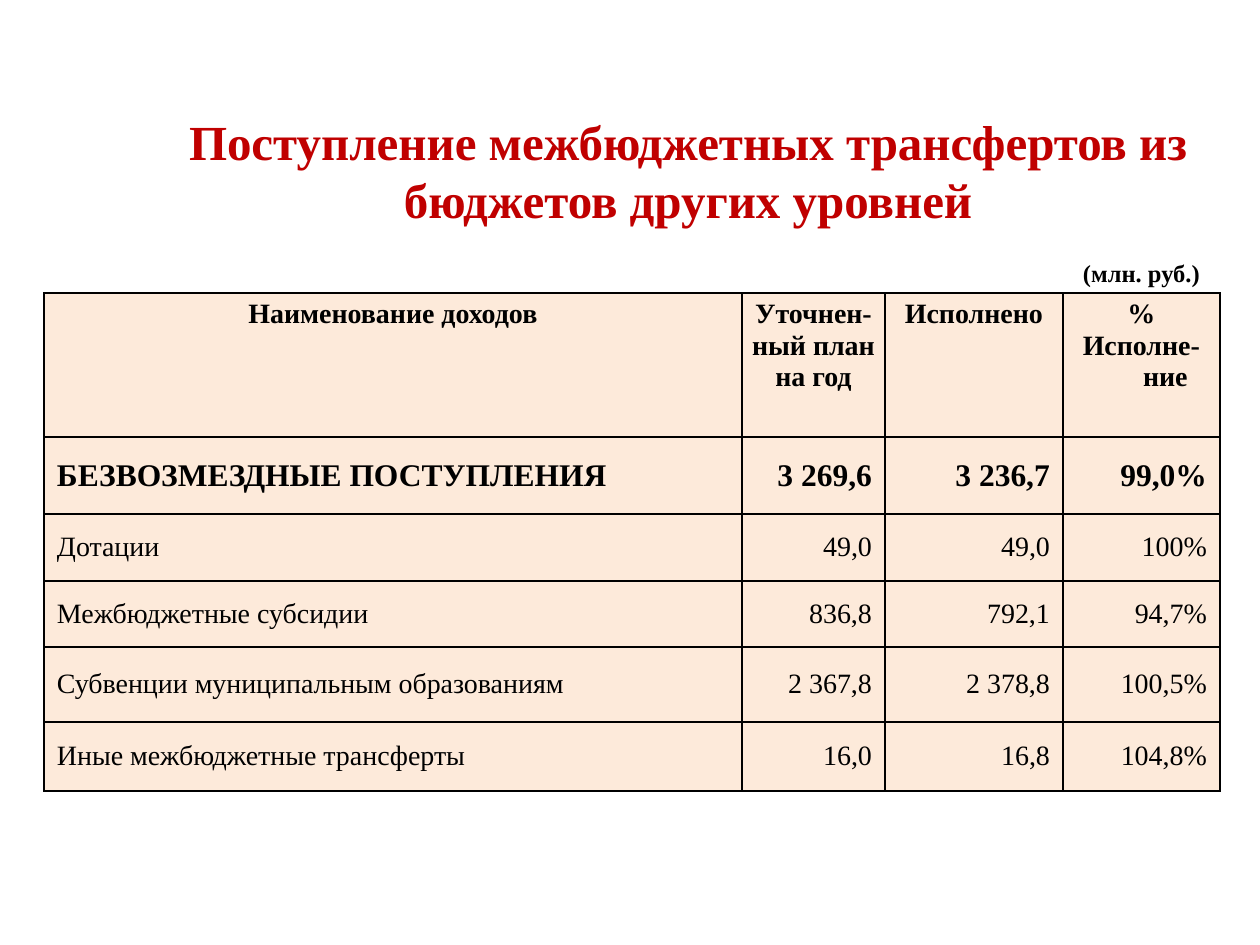
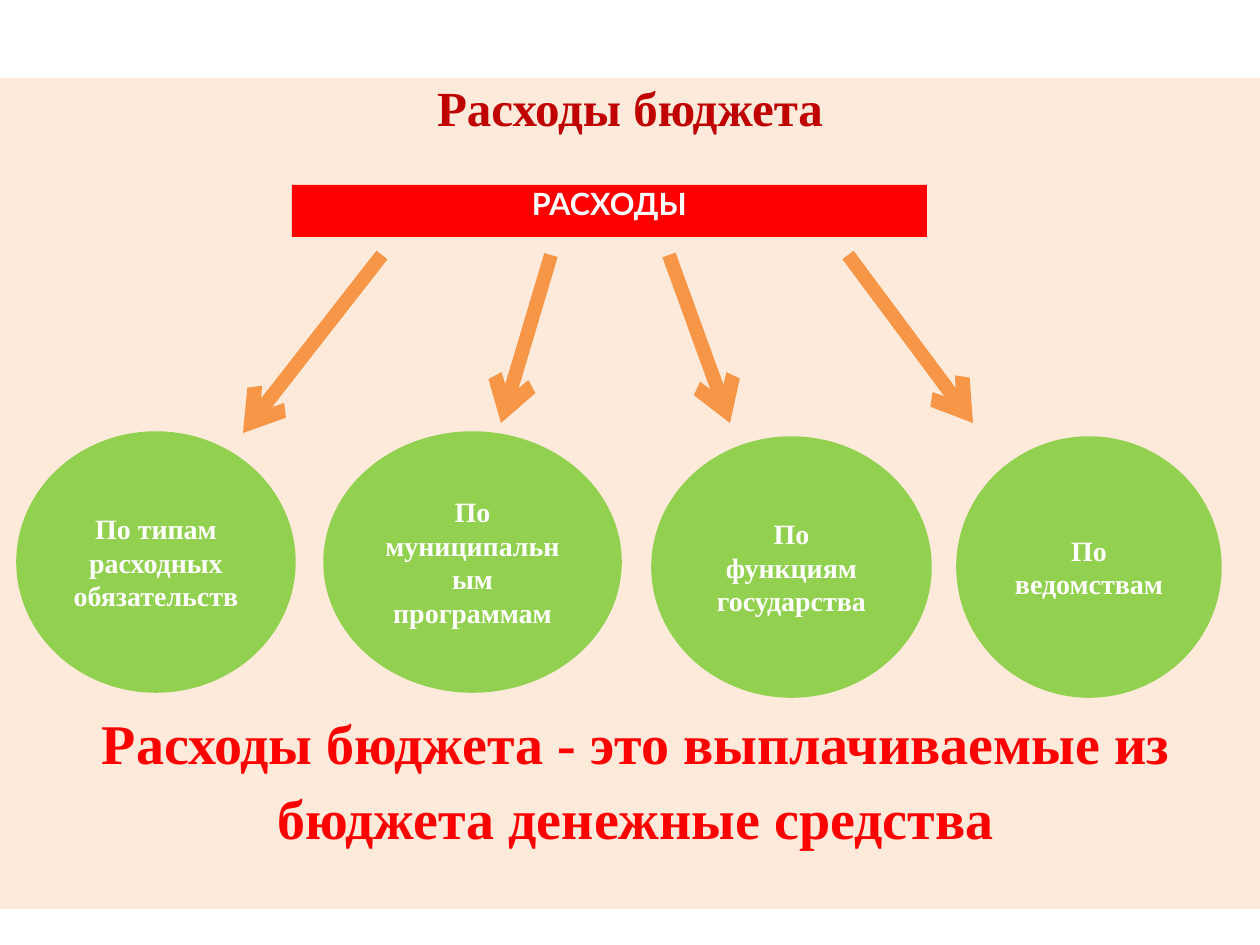
from lxml.etree import SubElement
from pptx import Presentation
from pptx.dml.color import RGBColor
from pptx.enum.shapes import MSO_CONNECTOR, MSO_SHAPE
from pptx.enum.text import MSO_ANCHOR, MSO_AUTO_SIZE, PP_ALIGN
from pptx.oxml import parse_xml
from pptx.oxml.ns import nsdecls, qn
from pptx.util import Emu, Inches, Pt

# Shared style
COLORS = {"peach": "FDEADA", "dark_red": "C00000", "red": "FF0000", "green": "92D050",
          "orange": "F79646", "black": "000000", "white": "FFFFFF"}
SERIF = "Times New Roman"
PX_PER_INCH = 126
PLAIN_TABLE = "{2D5ABB26-0587-4C30-8999-92F81FD0307C}"
INSETS = (13, 6, 13, 6)
NO_INSETS = (0, 0, 0, 0)
HANGING = 48

# Slide 1 content: a blank row on top carries the unit label
TRANSFERS_TITLE = "Поступление межбюджетных трансфертов из бюджетов других уровней"
UNIT = "(млн. руб.)"
HEADER = ["Наименование доходов", "Уточнен-\nный план\nна год", "Исполнено", "%\nИсполне-ние"]
INCOME = [
    ("БЕЗВОЗМЕЗДНЫЕ ПОСТУПЛЕНИЯ", "3 269,6", "3 236,7", "99,0%"),
    ("Дотации", "49,0", "49,0", "100%"),
    ("Межбюджетные субсидии", "836,8", "792,1", "94,7%"),
    ("Субвенции муниципальным образованиям", "2 367,8", "2 378,8", "100,5%"),
    ("Иные межбюджетные трансферты", "16,0", "16,8", "104,8%"),
]
COLUMN_WIDTHS = [698, 143, 178, 157]
ROW_HEIGHTS = [59, 144, 77, 67, 66, 75, 69]

# Slide 2 content
EXPENSES_TITLE = "Расходы бюджета"
EXPENSES = "РАСХОДЫ"
DEFINITION = "Расходы бюджета - это выплачиваемые из бюджета денежные средства"
GROUP_HEIGHT, ARROW_TOP = 258, 255
# text, left, top, width, arrow start x, arrow end
GROUPS = [
    ("По типам расходных обязательств", 18, 433, 276, 382, (243, 433)),
    ("По муниципальным программам", 325, 433, 295, 551, (501, 423)),
    ("По функциям государства", 653, 438, 277, 669, (730, 423)),
    ("По ведомствам", 958, 438, 262, 848, (973, 423)),
]


def px(length):
    return Emu(round(length * 914400 / PX_PER_INCH))


def color(name):
    return RGBColor.from_string(COLORS[name])


def write(frame, text, size, ink, align=PP_ALIGN.CENTER, font=SERIF, bold=True, hanging=0):
    frame.text = text
    for para in frame.paragraphs:
        para.alignment = align
        if hanging:
            properties = para._p.get_or_add_pPr()
            properties.set("marL", str(px(hanging)))
            properties.set("indent", str(-px(hanging)))
        for name, value in {"name": font, "size": Pt(size), "bold": bold}.items():
            setattr(para.font, name, value)
        para.font.color.rgb = color(ink)


def set_frame(frame, insets=INSETS, anchor=MSO_ANCHOR.TOP):
    left, top, right, bottom = map(px, insets)
    settings = {"margin_left": left, "margin_top": top, "margin_right": right,
                "margin_bottom": bottom, "vertical_anchor": anchor,
                "word_wrap": True, "auto_size": MSO_AUTO_SIZE.NONE}
    for name, value in settings.items():
        setattr(frame, name, value)


def add_page(deck, title, area, insets=INSETS):
    page = deck.slides.add_slide(deck.slide_layouts[5])
    box = page.shapes.title
    box.left, box.top, box.width, box.height = map(px, area)
    set_frame(box.text_frame, insets)
    write(box.text_frame, title, 28, "dark_red")
    return page


def add_label(page, text, area, size, ink, insets=INSETS):
    box = page.shapes.add_textbox(*map(px, area))
    set_frame(box.text_frame, insets)
    write(box.text_frame, text, size, ink)
    return box


def add_filled(page, kind, area, fill):
    box = page.shapes.add_shape(kind, *map(px, area))
    box.shadow.inherit = False
    box.fill.solid()
    box.fill.fore_color.rgb = color(fill)
    box.line.fill.background()
    return box


def add_borders(cell, sides):
    properties = cell._tc.get_or_add_tcPr()
    for position, side in enumerate(sides):
        properties.insert(position, parse_xml(
            f'<a:ln{side} {nsdecls("a")} w="12700"><a:solidFill>'
            f'<a:srgbClr val="{COLORS["black"]}"/></a:solidFill></a:ln{side}>'))


def add_arrow(page, start, end):
    line = page.shapes.add_connector(MSO_CONNECTOR.STRAIGHT, *map(px, start + end))
    line.line.color.rgb = color("orange")
    line.line.width = Pt(8)
    SubElement(line.line._get_or_add_ln(), qn("a:tailEnd"), type="arrow")
    SubElement(line._element.spPr, qn("a:effectLst"))


def fill_cell(cell, text, row, column):
    is_header, is_total = row == 1, row == 2
    cell.fill.solid()
    cell.fill.fore_color.rgb = color("peach")
    insets = (2, 6, 2, 6) if is_header and column == 1 else INSETS
    cell.margin_left, cell.margin_top, cell.margin_right, cell.margin_bottom = map(px, insets)
    cell.vertical_anchor = MSO_ANCHOR.TOP if is_header else MSO_ANCHOR.MIDDLE
    align = PP_ALIGN.RIGHT if column else PP_ALIGN.LEFT
    write(cell.text_frame, text, 18 if is_total else 16, "black",
          PP_ALIGN.CENTER if is_header else align, bold=is_header or is_total, hanging=HANGING)
    add_borders(cell, "LRTB")


def build_transfers(deck):
    page = add_page(deck, TRANSFERS_TITLE, (168, 105, 1040, 131))

    # Income table
    area = (44, 234, sum(COLUMN_WIDTHS), sum(ROW_HEIGHTS))
    table = page.shapes.add_table(len(ROW_HEIGHTS), len(COLUMN_WIDTHS), *map(px, area)).table
    table.first_row = table.horz_banding = False
    table._tbl.tblPr.find(qn("a:tableStyleId")).text = PLAIN_TABLE
    for column, width in zip(table.columns, COLUMN_WIDTHS):
        column.width = px(width)
    for row, height in zip(table.rows, ROW_HEIGHTS):
        row.height = px(height)
    for cell in table.rows[0].cells:
        cell.fill.background()
        add_borders(cell, "B")
    for row, texts in enumerate([HEADER, *INCOME], start=1):
        for column, text in enumerate(texts):
            fill_cell(table.cell(row, column), text, row, column)

    add_label(page, UNIT, (1066, 252, 151, 43), 14, "black")


def build_expenses(deck):
    # The title fills the whole peach band
    page = add_page(deck, EXPENSES_TITLE, (0, 78, 1260, 831), NO_INSETS)
    band = page.shapes.title
    band.fill.solid()
    band.fill.fore_color.rgb = color("peach")

    # Root of the scheme
    root = add_filled(page, MSO_SHAPE.RECTANGLE, (292, 185, 635, 52), "red")
    set_frame(root.text_frame, NO_INSETS)
    write(root.text_frame, EXPENSES, 17.5, "white", font="Lato")

    # Definition
    definition = add_label(page, DEFINITION, (78, 700, 1116, 169), 32, "red", NO_INSETS)
    definition.text_frame.paragraphs[0].line_spacing = Pt(43.2)

    # Groups and their arrows
    for text, left, top, width, arrow_x, arrow_end in GROUPS:
        group = add_filled(page, MSO_SHAPE.OVAL, (left, top, width, GROUP_HEIGHT), "green")
        group.line.color.rgb = color("green")
        group.line.width = Pt(2)
        set_frame(group.text_frame, anchor=MSO_ANCHOR.MIDDLE)
        write(group.text_frame, text, 16, "white")
        add_arrow(page, (arrow_x, ARROW_TOP), arrow_end)


def main():
    deck = Presentation()
    deck.slide_width, deck.slide_height = Inches(10), Inches(7.5)
    build_transfers(deck)
    build_expenses(deck)
    deck.save("out.pptx")


if __name__ == "__main__":
    main()
